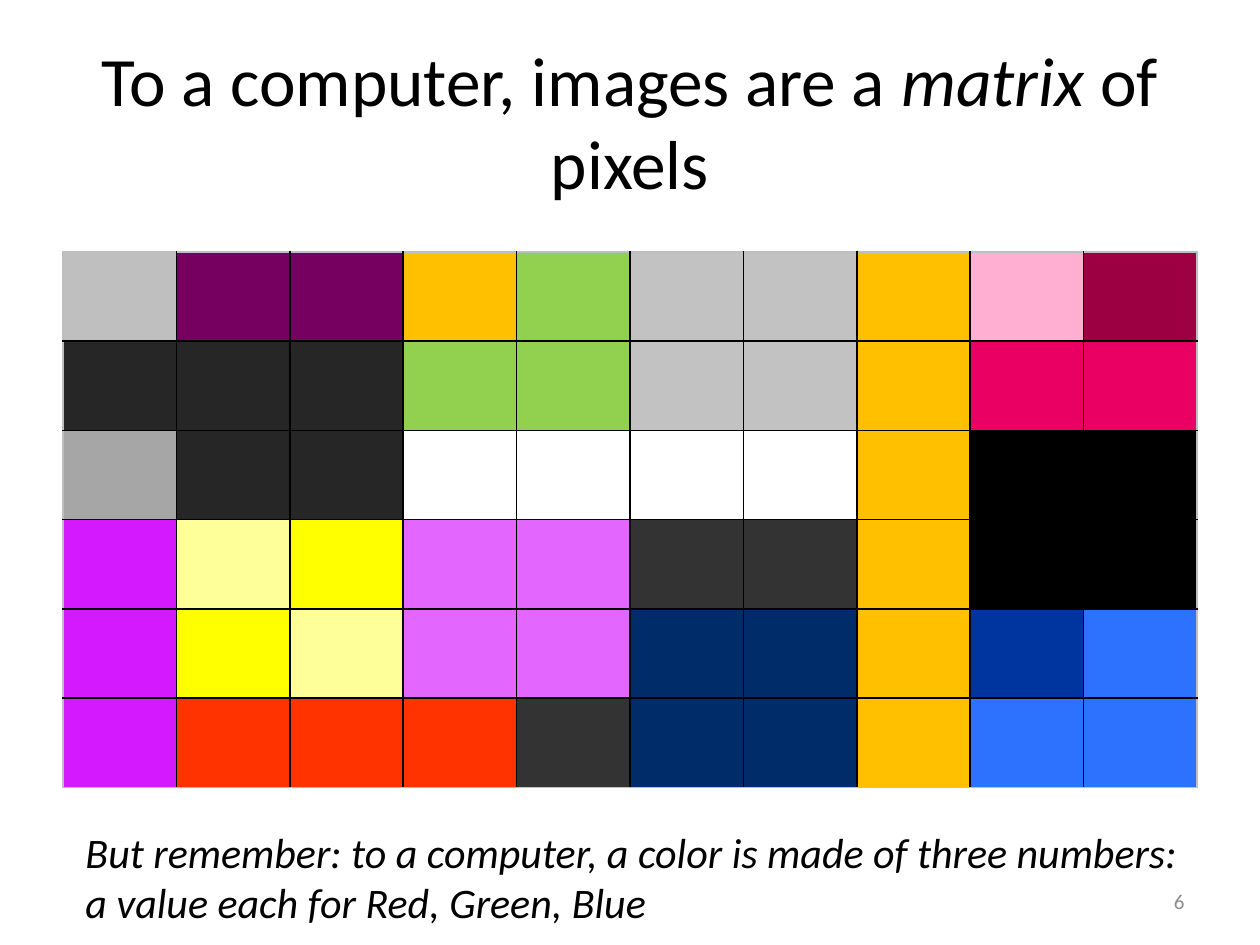
from lxml import etree
from pptx import Presentation
from pptx.dml.color import RGBColor
from pptx.enum.text import MSO_ANCHOR, PP_ALIGN
from pptx.oxml.ns import qn
from pptx.util import Pt

LEFT, MID, RIGHT = PP_ALIGN.LEFT, PP_ALIGN.CENTER, PP_ALIGN.RIGHT
TOP, CENTER = MSO_ANCHOR.TOP, MSO_ANCHOR.MIDDLE
PX = 9144  # 100 px to the inch


def rgb(code):
    return RGBColor.from_string(code)


def write(shape, *runs, size=24, color="000000", align=LEFT, anchor=TOP):
    """Fill a shape with one paragraph of (text, italic) runs."""
    frame = shape.text_frame
    frame.word_wrap = True
    frame.vertical_anchor = anchor
    para = frame.paragraphs[0]
    para.alignment = align
    for text, slant in runs:
        run = para.add_run()
        run.text = text
        run.font.name = "Calibri"
        run.font.size = Pt(size)
        run.font.italic = slant
        run.font.color.rgb = rgb(color)


deck = Presentation()
deck.slide_width, deck.slide_height = 1000 * PX, 750 * PX
slide = deck.slides.add_slide(deck.slide_layouts[5])

# Title
title = slide.shapes.title
title.left, title.top = 50 * PX, 33 * PX
title.width, title.height = 900 * PX, 125 * PX
write(title, ("To a computer, images are a ", False), ("matrix", True),
      (" of pixels", False), size=39.6, align=MID, anchor=CENTER)

# Pixel matrix
PIXELS = [
    "BFBFBF 75005F 75005F FFC000 92D050 C2C2C2 C2C2C2 FFC000 FFAFD1 9C0042",
    "262626 262626 262626 92D050 92D050 C2C2C2 C2C2C2 FFC000 E90062 E90062",
    "A6A6A6 262626 262626 FFFFFF FFFFFF FFFFFF FFFFFF FFC000 000000 000000",
    "D519FF FFFF99 FFFF00 E366FF E366FF 333333 333333 FFC000 000000 000000",
    "D519FF FFFF00 FFFF99 E366FF E366FF 002D6A 002D6A FFC000 00349E 2C71FF",
    "D519FF FF3300 FF3300 FF3300 333333 002D6A 002D6A FFC000 2C71FF 2C71FF",
]
grid = [row.split() for row in PIXELS]
rows, cols = len(grid), len(grid[0])
table = slide.shapes.add_table(rows, cols, 50 * PX, 200 * PX,
                               900 * PX, 425 * PX).table
table.first_row = table.horz_banding = False

for r, row in enumerate(grid):
    for c, color in enumerate(row):
        cell = table.cell(r, c)
        props = cell._tc.get_or_add_tcPr()
        # Black inner lines, grey outer frame
        edges = {"L": c == 0, "R": c == cols - 1,
                 "T": r == 0, "B": r == rows - 1}
        for side, outer in edges.items():
            line = etree.SubElement(props, qn("a:ln" + side), w=str(Pt(1)))
            fill = etree.SubElement(line, qn("a:solidFill"))
            etree.SubElement(fill, qn("a:srgbClr"),
                             val="BFBFBF" if outer else "000000")
        cell.fill.solid()
        cell.fill.fore_color.rgb = rgb(color)

# Slide number
number = slide.shapes.add_textbox(717 * PX, 695 * PX, 233 * PX, 40 * PX)
write(number, ("6", False), size=12, color="8C8C8C", align=RIGHT,
      anchor=CENTER)

# Closing note
note = slide.shapes.add_textbox(58 * PX, 651 * PX, 892 * PX, 91 * PX)
write(note, ("But remember: to a computer, a color is made of three numbers: "
             "a value each for Red, Green, Blue", True))

deck.save("out.pptx")
